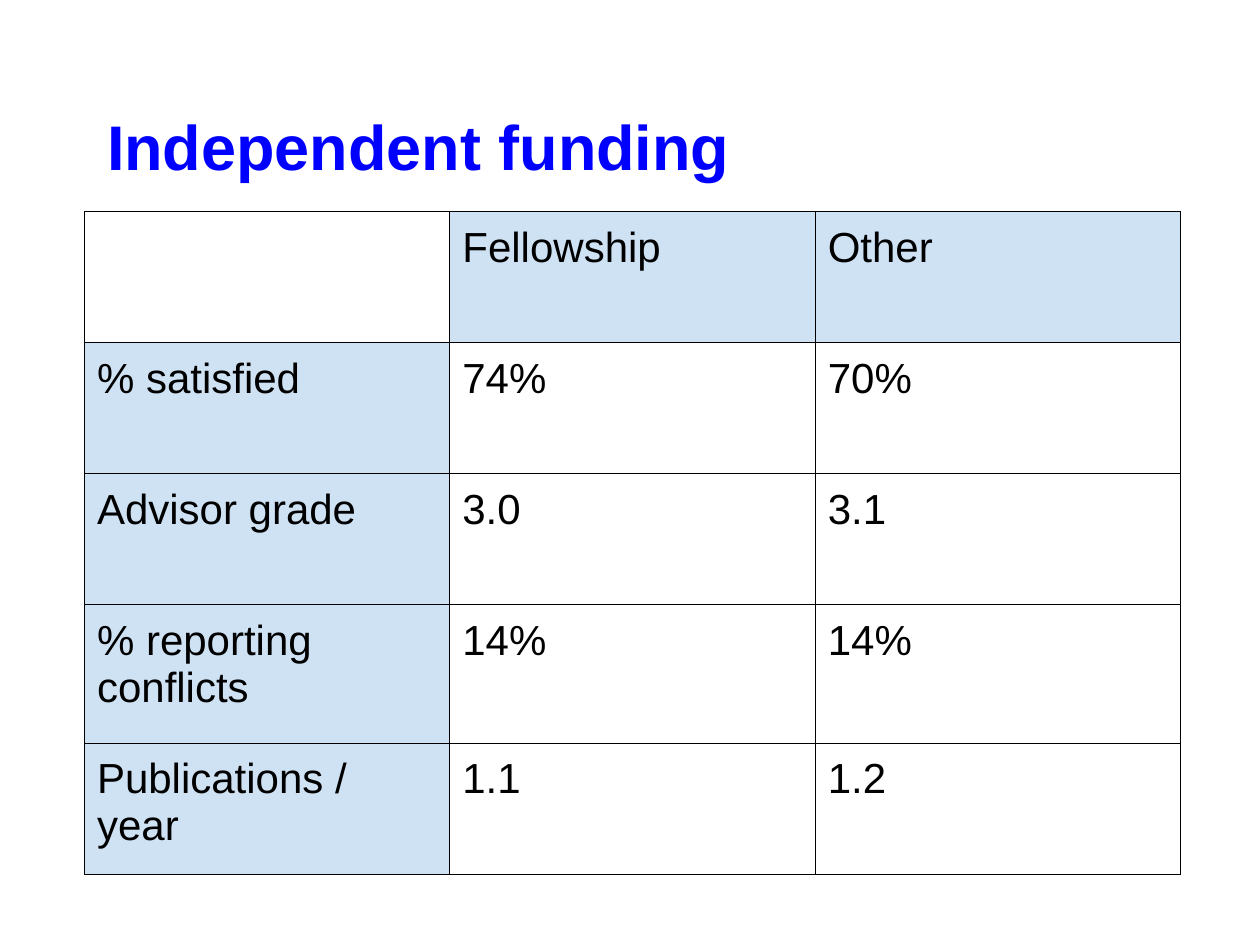
from lxml import etree
from pptx import Presentation
from pptx.dml.color import RGBColor
from pptx.enum import text
from pptx.oxml.ns import qn
from pptx.util import Inches, Pt

# Content
TITLE = "Independent funding"
ROWS = [
    ("", "Fellowship", "Other"),
    ("% satisfied", "74%", "70%"),
    ("Advisor grade", "3.0", "3.1"),
    ("% reporting conflicts", "14%", "14%"),
    ("Publications / year", "1.1", "1.2"),
]
COL_WIDTH = 2.9
ROW_HEIGHTS = [1.04, 1.04, 1.04, 1.1, 1.04]

THEME = {
    "font": "Arial",
    "title_size": 36,
    "cell_size": 24,
    "title": "0000FF",
    "ink": "000000",
    "header": "CFE2F3",
    "border_width": 0.75,
    "inset": 0.1,
}


def set_insets(target):
    for side in ("left", "top", "right", "bottom"):
        setattr(target, f"margin_{side}", Inches(THEME["inset"]))


def add_run(p, words, size, color, bold=False):
    r = p.add_run()
    r.text = words
    r.font.name = THEME["font"]
    r.font.size = Pt(size)
    r.font.bold = bold
    r.font.color.rgb = RGBColor.from_string(color)


def add_borders(cell):
    tc_pr = cell._tc.get_or_add_tcPr()
    for i, tag in enumerate(("a:lnL", "a:lnR", "a:lnT", "a:lnB")):
        ln = etree.Element(qn(tag), w=str(Pt(THEME["border_width"])))
        fill = etree.SubElement(ln, qn("a:solidFill"))
        etree.SubElement(fill, qn("a:srgbClr"), val=THEME["ink"])
        tc_pr.insert(i, ln)  # borders come before the cell fill


prs = Presentation()
prs.slide_width, prs.slide_height = Inches(10), Inches(7.5)
slide = prs.slides.add_slide(prs.slide_layouts[5])

# Title
title = slide.shapes.title
title.left, title.top = Inches(0.5), Inches(0.3)
title.width, title.height = Inches(9), Inches(1.25)
tf = title.text_frame
tf.word_wrap = True
tf.auto_size = text.MSO_AUTO_SIZE.NONE
tf.vertical_anchor = text.MSO_ANCHOR.BOTTOM
set_insets(tf)
p = tf.paragraphs[0]
p.alignment = text.PP_ALIGN.LEFT
p_pr = p._p.get_or_add_pPr()
p_pr.set("marL", "0")
p_pr.set("indent", str(Inches(0.25)))
add_run(p, TITLE, THEME["title_size"], THEME["title"], bold=True)

# Table
n_cols = len(ROWS[0])
table = slide.shapes.add_table(
    len(ROWS), n_cols, Inches(0.67), Inches(1.68),
    Inches(COL_WIDTH * n_cols), Inches(sum(ROW_HEIGHTS))).table
table.first_row = table.horz_banding = False
for col in table.columns:
    col.width = Inches(COL_WIDTH)
for row, height in zip(table.rows, ROW_HEIGHTS):
    row.height = Inches(height)

for i, row in enumerate(ROWS):
    for j, words in enumerate(row):
        cell = table.cell(i, j)
        set_insets(cell)
        if words:
            add_run(cell.text_frame.paragraphs[0], words,
                    THEME["cell_size"], THEME["ink"])
        # Headers are the first row and column, except the empty corner
        if (i == 0) != (j == 0):
            cell.fill.solid()
            cell.fill.fore_color.rgb = RGBColor.from_string(THEME["header"])
        else:
            cell.fill.background()
        add_borders(cell)

prs.save("out.pptx")
